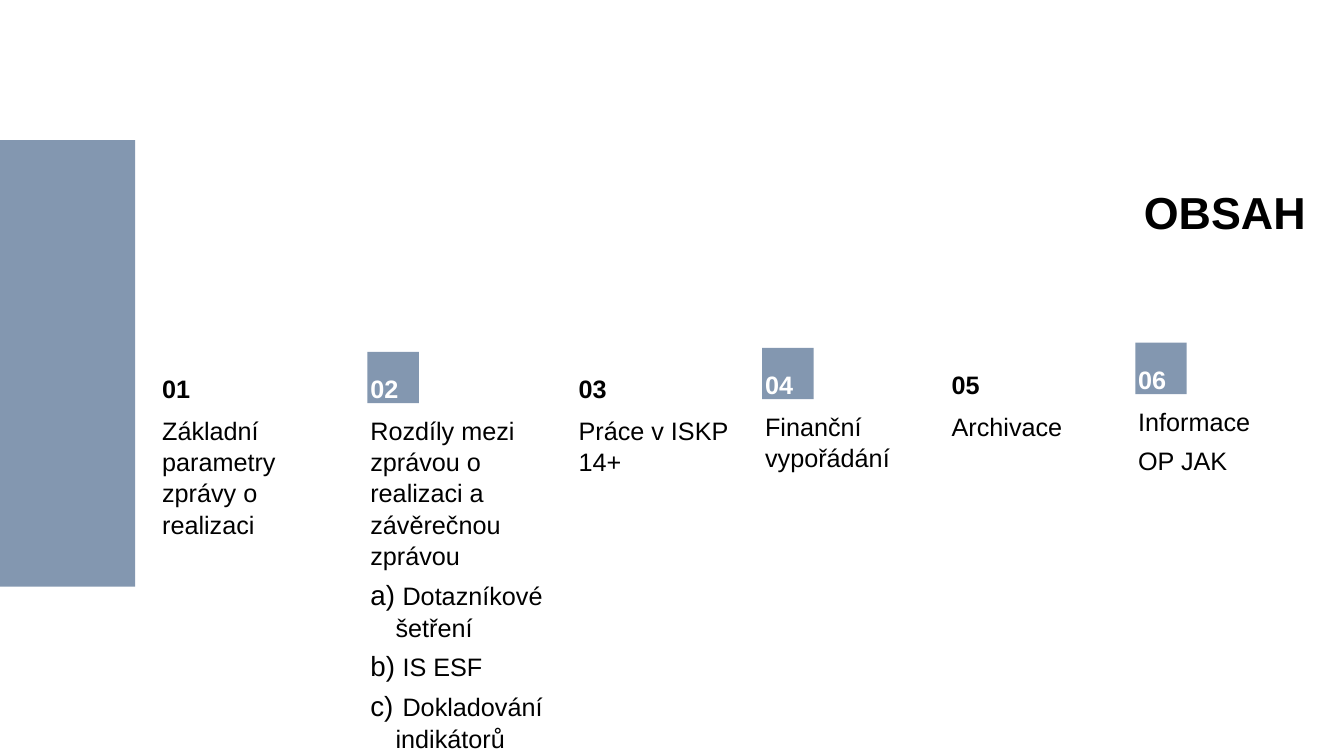
"""Build the agenda slide: a title over six numbered topics in columns."""
from dataclasses import dataclass
from itertools import accumulate

from lxml import etree
from pptx import Presentation
from pptx import util as u
from pptx.dml.color import RGBColor
from pptx.enum import shapes, text
from pptx.oxml.ns import qn

TITLE = "OBSAH"
# lines, lettered lines, boxed number, column step, text width, row top
TOPICS = [
    (["Základní parametry zprávy o realizaci"], [], False, 2.065, 1.85, 3.4),
    (["Rozdíly mezi zprávou o realizaci a závěrečnou zprávou"],
     [" Dotazníkové šetření", " IS ESF", " Dokladování indikátorů"],
     True, 2.065, 1.96, 3.4),
    (["Práce v ISKP 14+"], [], False, 1.85, 1.85, 3.4),
    (["Finanční vypořádání"], [], True, 1.85, 1.85, 3.36),
    (["Archivace"], [], False, 1.85, 1.85, 3.36),
    (["Informace", "OP JAK"], [], True, 1.85, 1.85, 3.31),
]


@dataclass(frozen=True)
class Theme:
    """Colours, font and type sizes."""
    blue: str = "8397B0"
    black: str = "000000"
    white: str = "FFFFFF"
    font: str = "Arial"
    head: int = 32
    body: int = 18


LOOK = Theme()
WIDE, HIGH = 13.33, 7.5
LEFT = 1.51
NUM_H, BODY_H = 0.655, 1.21
SIDE = 0.51
GAP_X, GAP_Y = 0.07, 0.09
INDENT = 0.25


def block(slide, *area):
    box = slide.shapes.add_shape(
        shapes.MSO_SHAPE.RECTANGLE, *map(u.Inches, area))
    box.shadow.inherit = False
    box.fill.solid()
    box.fill.fore_color.rgb = RGBColor.from_string(LOOK.blue)
    box.line.fill.background()


def letter(para):
    props = para._p.get_or_add_pPr()
    props.set("marL", str(u.Inches(INDENT)))
    props.set("indent", str(-u.Inches(INDENT)))
    etree.SubElement(props, qn("a:buSzPct"), val="110000")
    etree.SubElement(props, qn("a:buFont"), typeface=LOOK.font)
    etree.SubElement(props, qn("a:buAutoNum"), type="alphaLcParenR")


def write(slide, area, lines, size, color=LOOK.black, bold=False,
          low=False, right=False, items=(), space=None):
    frame = slide.shapes.add_textbox(*map(u.Inches, area)).text_frame
    frame.word_wrap = True
    frame.vertical_anchor = (
        text.MSO_ANCHOR.BOTTOM if low else text.MSO_ANCHOR.TOP)
    frame.text = "\n".join([*lines, *items])
    for row, para in enumerate(frame.paragraphs):
        para.alignment = text.PP_ALIGN.RIGHT if right else text.PP_ALIGN.LEFT
        if space:
            para.line_spacing = space
        if row:
            para.space_before = u.Pt(6)
        if row >= len(lines):
            letter(para)
        for run in para.runs:
            font = run.font
            font.name, font.size, font.bold = LOOK.font, u.Pt(size), bold
            font.color.rgb = RGBColor.from_string(color)


def main():
    deck = Presentation()
    deck.slide_width, deck.slide_height = u.Inches(WIDE), u.Inches(HIGH)
    slide = deck.slides.add_slide(deck.slide_layouts[6])

    block(slide, 0, 1.39, 1.34, 4.43)
    write(slide, (7.07, 1.42, 5.98, 0.99), [TITLE], LOOK.head,
          bold=True, low=True, right=True)

    lefts = accumulate((topic[3] for topic in TOPICS), initial=LEFT)
    for num, (left, topic) in enumerate(zip(lefts, TOPICS), 1):
        lines, items, boxed, _, width, top = topic
        if boxed:
            block(slide, left + GAP_X, top + GAP_Y, SIDE, SIDE)
        write(slide, (left, top, 1.85, NUM_H), [f"{num:02}"], LOOK.body,
              LOOK.white if boxed else LOOK.black, bold=True, low=True)
        write(slide, (left, top + NUM_H, width, BODY_H), lines, LOOK.body,
              items=items, space=1.04)

    deck.save("out.pptx")


if __name__ == "__main__":
    main()
